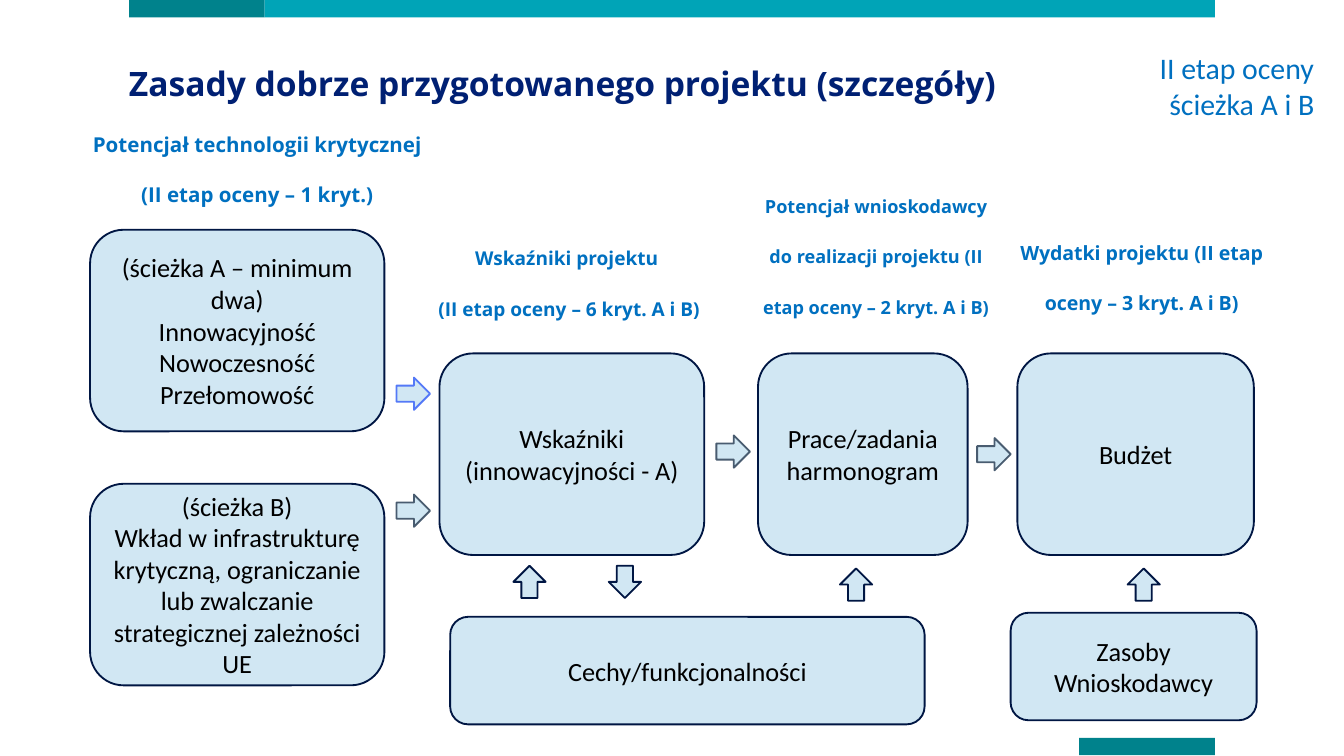
from typing import NamedTuple

import pptx
import pptx.dml.color
import pptx.enum.shapes
import pptx.enum.text
import pptx.util

PX = 9144
Shape = pptx.enum.shapes.MSO_SHAPE
Align = pptx.enum.text.PP_ALIGN
Anchor = pptx.enum.text.MSO_ANCHOR

NAVY = "002073"
OUTLINE = "001643"
SLATE = "495C70"
BRIGHT_BLUE = "5479F7"
BLUE = "0070C0"
PALE_BLUE = "D1E7F3"
TEAL = "00A4B7"
DARK_TEAL = "00828C"
BLACK = "000000"

STAGE_TOP = 263
STAGE_HEIGHT = 150
SUPPORT_HEIGHT = 80
ARROW_SIZE = 24


class Bar(NamedTuple):
    left: int
    top: int
    width: int
    color: str


class Box(NamedTuple):
    left: int
    top: int
    width: int
    height: int
    text: str


class Arrow(NamedTuple):
    kind: Shape
    left: int
    top: int
    line: str = OUTLINE


class Heading(NamedTuple):
    left: int
    top: int
    width: int
    height: int
    text: str
    size: float
    color: str = BLUE
    align: Align = Align.CENTER


BARS = [
    Bar(96, 0, 101, DARK_TEAL),
    Bar(197, 0, 707, TEAL),
    Bar(803, 549, 101, DARK_TEAL),
]

BOXES = [
    Box(67, 171, 219, STAGE_HEIGHT,
        "(ścieżka A – minimum dwa)\nInnowacyjność\nNowoczesność\nPrzełomowość"),
    Box(67, 360, 219, STAGE_HEIGHT,
        "(ścieżka B)\nWkład w infrastrukturę krytyczną, ograniczanie "
        "lub zwalczanie strategicznej zależności UE"),
    Box(327, STAGE_TOP, 197, STAGE_HEIGHT, "Wskaźniki\n(innowacyjności - A) "),
    Box(564, STAGE_TOP, 156, STAGE_HEIGHT, "Prace/zadania\nharmonogram"),
    Box(757, STAGE_TOP, 176, STAGE_HEIGHT, "Budżet"),
    Box(335, 459, 353, SUPPORT_HEIGHT, "Cechy/funkcjonalności"),
    Box(752, 456, 183, SUPPORT_HEIGHT, "Zasoby Wnioskodawcy"),
]

ARROWS = [
    Arrow(Shape.RIGHT_ARROW, 295, 281, BRIGHT_BLUE),
    Arrow(Shape.RIGHT_ARROW, 295, 368, SLATE),
    Arrow(Shape.RIGHT_ARROW, 533, 324, SLATE),
    Arrow(Shape.RIGHT_ARROW, 727, 326, SLATE),
    Arrow(Shape.UP_ARROW, 382, 421),
    Arrow(Shape.DOWN_ARROW, 453, 421),
    Arrow(Shape.UP_ARROW, 625, 423),
    Arrow(Shape.UP_ARROW, 839, 423),
]

HEADINGS = [
    Heading(96, 39, 790, 45, "Zasady dobrze przygotowanego projektu (szczegóły)",
            18, NAVY, Align.LEFT),
    Heading(67, 79, 249, 82,
            "Potencjał technologii krytycznej (II etap oceny – 1 kryt.)", 11),
    Heading(320, 163, 207, 82,
            "Wskaźniki projektu \n(II etap oceny – 6 kryt. A i B)", 10.2),
    Heading(564, 124, 176, 150,
            "Potencjał wnioskodawcy do realizacji projektu "
            "(II etap oceny – 2 kryt. A i B)", 9.7),
    Heading(752, 159, 195, 82,
            "Wydatki projektu (II etap oceny – 3 kryt. A i B)", 10.5),
]


def rgb(color: str) -> pptx.dml.color.RGBColor:
    return pptx.dml.color.RGBColor.from_string(color)


def draw_shape(slide, kind: Shape, left: int, top: int, width: int, height: int,
               fill: str, line: str | None = None):
    shape = slide.shapes.add_shape(kind, left * PX, top * PX, width * PX, height * PX)
    shape.shadow.inherit = False
    shape.fill.solid()
    shape.fill.fore_color.rgb = rgb(fill)
    if line:
        shape.line.color.rgb = rgb(line)
        shape.line.width = pptx.util.Pt(1)
    else:
        shape.line.fill.background()
    return shape


def write(frame, text: str, font: str, size: float, color: str,
          align: Align, bold: bool = False) -> None:
    frame.word_wrap = True
    frame.text = text
    for paragraph in frame.paragraphs:
        paragraph.alignment = align
        for run in paragraph.runs:
            run.font.name = font
            run.font.size = pptx.util.Pt(size)
            run.font.bold = bold
            run.font.color.rgb = rgb(color)


def draw_box(slide, box: Box) -> None:
    shape = draw_shape(slide, Shape.ROUNDED_RECTANGLE, box.left, box.top,
                       box.width, box.height, PALE_BLUE, OUTLINE)
    shape.text_frame.vertical_anchor = Anchor.MIDDLE
    write(shape.text_frame, box.text, "Calibri", 14.1, BLACK, Align.CENTER)


def add_frame(slide, left: int, top: int, width: int, height: int):
    return slide.shapes.add_textbox(left * PX, top * PX, width * PX, height * PX).text_frame


def draw_heading(slide, heading: Heading) -> None:
    frame = add_frame(slide, heading.left, heading.top, heading.width, heading.height)
    frame.margin_left = frame.margin_right = frame.margin_top = frame.margin_bottom = 0
    write(frame, heading.text, "Open Sans", heading.size, heading.color,
          heading.align, bold=True)
    for paragraph in frame.paragraphs:
        paragraph.line_spacing = pptx.util.Pt(27)


def draw_stage_label(slide) -> None:
    frame = add_frame(slide, 853, 32, 142, 64)
    write(frame, "II etap oceny\nścieżka A i B", "Calibri", 16, BLUE, Align.CENTER)
    frame.paragraphs[0].alignment = Align.LEFT


def main() -> None:
    deck = pptx.Presentation()
    deck.slide_width = 1000 * PX
    deck.slide_height = deck.slide_width * 9 // 16
    slide = deck.slides.add_slide(deck.slide_layouts[6])

    for bar in BARS:
        draw_shape(slide, Shape.RECTANGLE, bar.left, bar.top, bar.width, 13, bar.color)
    for box in BOXES:
        draw_box(slide, box)
    for arrow in ARROWS:
        width = ARROW_SIZE + (arrow.kind == Shape.RIGHT_ARROW)
        draw_shape(slide, arrow.kind, arrow.left, arrow.top, width, ARROW_SIZE,
                   PALE_BLUE, arrow.line)
    for heading in HEADINGS:
        draw_heading(slide, heading)
    draw_stage_label(slide)

    deck.save("out.pptx")


if __name__ == "__main__":
    main()
